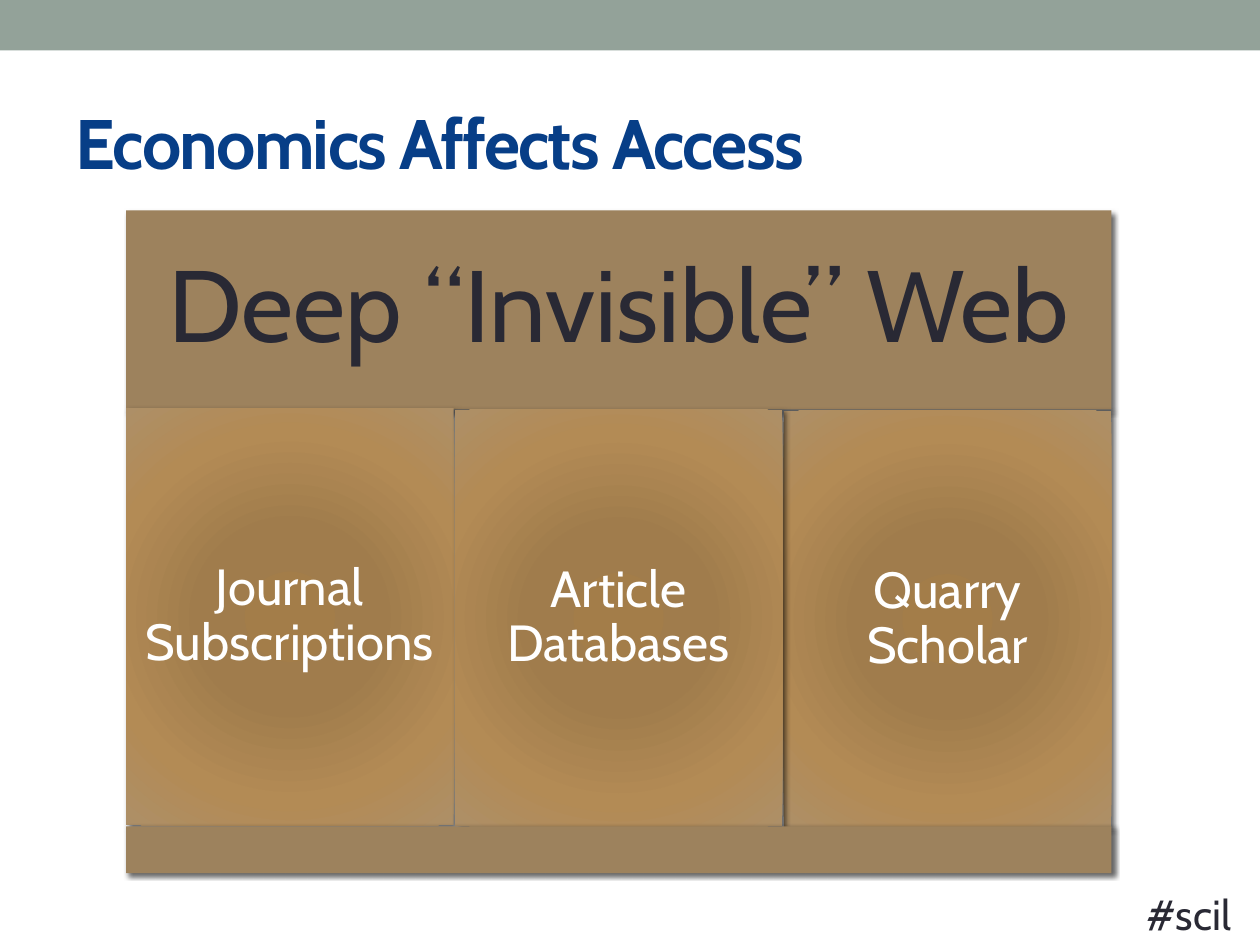
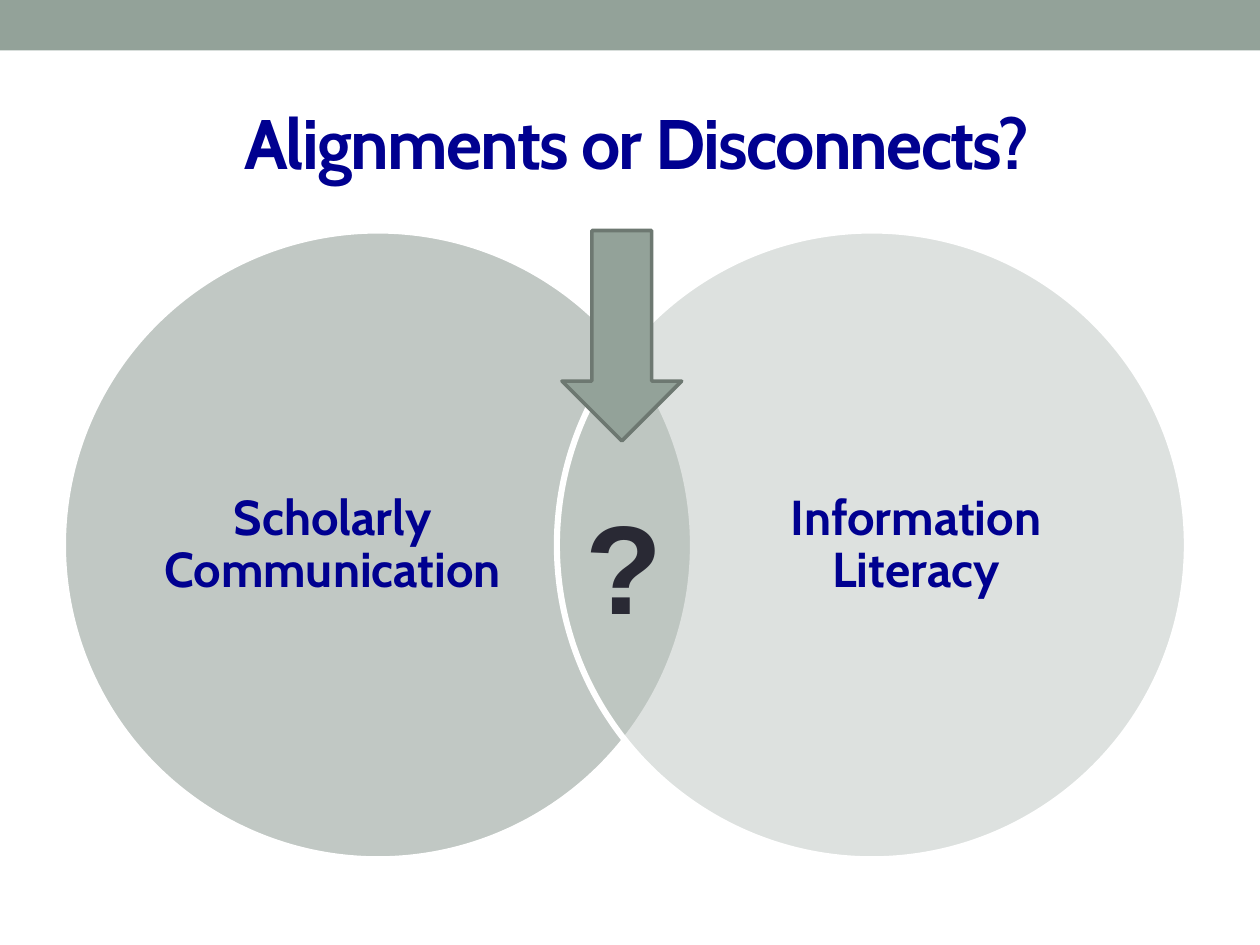
"""Build two slides on access economics and on two overlapping fields."""
from pptx import Presentation
from pptx.dml.color import RGBColor
from pptx.enum import shapes, text
from pptx.oxml import ns, parse_xml
from pptx.util import Pt

FONT = "Cabin"
INK, WHITE, SAGE, NAVY, BROWN = "292934", "FFFFFF", "93A299", "000090", "9D825D"
CENTER, LEFT = text.PP_ALIGN.CENTER, text.PP_ALIGN.LEFT
MIDDLE, TOP = text.MSO_ANCHOR.MIDDLE, text.MSO_ANCHOR.TOP
KIND = shapes.MSO_SHAPE

ACCESS_TITLE = ("Economics Affects Access", "073E87", LEFT)
HEADING = "Deep “Invisible” Web"
SOURCES = [(0, "Journal Subscriptions"), (2, "Quarry Scholar"), (1, "Article Databases")]
GLOW = [(0, "A37D49"), (34, "A07C4C"), (70, "B38B55"), (100, "AD8F67")]
HASHTAG = "#scil"

FIELDS_TITLE = (" Alignments or Disconnects?", NAVY, CENTER)
FIELDS = [
    ("Scholarly Communication", "85938B", 36, 86.4),
    ("Information Literacy", "BDC5C0", 318.24, 419.76),
]
OVERLAP = "?"


def rgb(value):
    return RGBColor.from_string(value)


def xml(markup):
    head, rest = markup.split(" ", 1)
    return parse_xml(f"{head} {ns.nsdecls('a')} {rest}")


def write(shape, words, size, color, align=CENTER, anchor=MIDDLE, inset=None,
          bold=False, font=FONT, spacing=None):
    frame = shape.text_frame
    frame.word_wrap = True
    frame.vertical_anchor = anchor
    if inset is not None:
        frame.margin_left = frame.margin_right = Pt(inset)
        frame.margin_top = frame.margin_bottom = Pt(inset)
    line = frame.paragraphs[0]
    line.text = words
    line.alignment = align
    if spacing:
        line.line_spacing = spacing
    line.font.name, line.font.size, line.font.bold = font, Pt(size), bold
    line.font.color.rgb = rgb(color)
    return line


def label(slide, box, words, size, color, **style):
    write(slide.shapes.add_textbox(*map(Pt, box)), words, size, color, **style)


def add_shape(slide, kind, box, fill, outline=None, alpha=None):
    shape = slide.shapes.add_shape(kind, *map(Pt, box))
    shape.shadow.inherit = False
    shape.fill.solid()
    shape.fill.fore_color.rgb = rgb(fill)
    if alpha:
        tint = shape.element.spPr.find(ns.qn("a:solidFill"))[0]
        tint.append(xml(f'<a:alpha val="{alpha * 1000}"/>'))
    if outline:
        shape.line.color.rgb = rgb(outline[0])
        shape.line.width = Pt(outline[1])
    else:
        shape.line.fill.background()
    return shape


def add_panel(slide, box, fill):
    panel = add_shape(slide, KIND.RECTANGLE, box, fill)
    panel.element.spPr.find(ns.qn("a:effectLst")).append(xml(
        f'<a:outerShdw blurRad="{Pt(3)}" dist="{Pt(2)}" dir="2700000" rotWithShape="0">'
        '<a:srgbClr val="000000"><a:alpha val="60000"/></a:srgbClr></a:outerShdw>'))
    return panel


def add_glow(shape):
    stops = "".join(f'<a:gs pos="{at * 1000}"><a:srgbClr val="{color}"/></a:gs>'
                    for at, color in GLOW)
    properties = shape.element.spPr
    properties.replace(properties.find(ns.qn("a:solidFill")), xml(
        f'<a:gradFill rotWithShape="1"><a:gsLst>{stops}</a:gsLst><a:path path="circle">'
        '<a:fillToRect l="100000" t="100000" r="100000" b="100000"/></a:path></a:gradFill>'))


def start_slide(deck, words, color, align):
    slide = deck.slides.add_slide(deck.slide_layouts[5])
    add_shape(slide, KIND.RECTANGLE, (0, 0, 720, 28.8), SAGE)
    title = slide.shapes.title
    title.left, title.top, title.width, title.height = map(Pt, (36, 41.76, 648, 77.76))
    line = write(title, words, 40, color, align, bold=True)
    line.runs[0].font._element.set("spc", "-100")
    return slide


def build_access(deck):
    slide = start_slide(deck, *ACCESS_TITLE)
    left, width, top = 72, 563.04, 233.28
    gap, drift = 0.6, 0.72
    column = (width - 2 * gap) / 3
    heading = add_panel(slide, (left, 120.24, width, 113.76), BROWN)
    write(heading, HEADING, 58, INK, inset=17.28, spacing=0.9)
    for place, source in SOURCES:
        box = (left + place * (column + gap), top + place * drift, column, 238.32)
        panel = add_panel(slide, box, BROWN)
        add_glow(panel)
        write(panel, source, 29, WHITE, inset=8.64, spacing=0.9)
    add_panel(slide, (left, 472.32, width, 26.64), BROWN)
    label(slide, (648, 504, 72, 36), HASHTAG, 24, INK, align=LEFT, anchor=TOP)


def build_fields(deck):
    slide = start_slide(deck, *FIELDS_TITLE)
    for field, tint, circle_left, words_left in FIELDS:
        add_shape(slide, KIND.OVAL, (circle_left, 131.76, 360, 359.28), tint,
                  (WHITE, 3.5), alpha=50)
        label(slide, (words_left, 174.24, 207.36, 275.04), field, 28, NAVY,
              inset=0, bold=True, spacing=0.9)
    add_shape(slide, KIND.DOWN_ARROW, (321.12, 131.76, 68.4, 120.24), SAGE, ("6D7871", 2.08))
    label(slide, (327.6, 275.76, 68.4, 94.32), OVERLAP, 72, INK,
          align=LEFT, anchor=TOP, bold=True, font="Arial")


def main():
    deck = Presentation()
    deck.slide_width, deck.slide_height = Pt(720), Pt(540)
    build_access(deck)
    build_fields(deck)
    deck.save("out.pptx")


if __name__ == "__main__":
    main()
